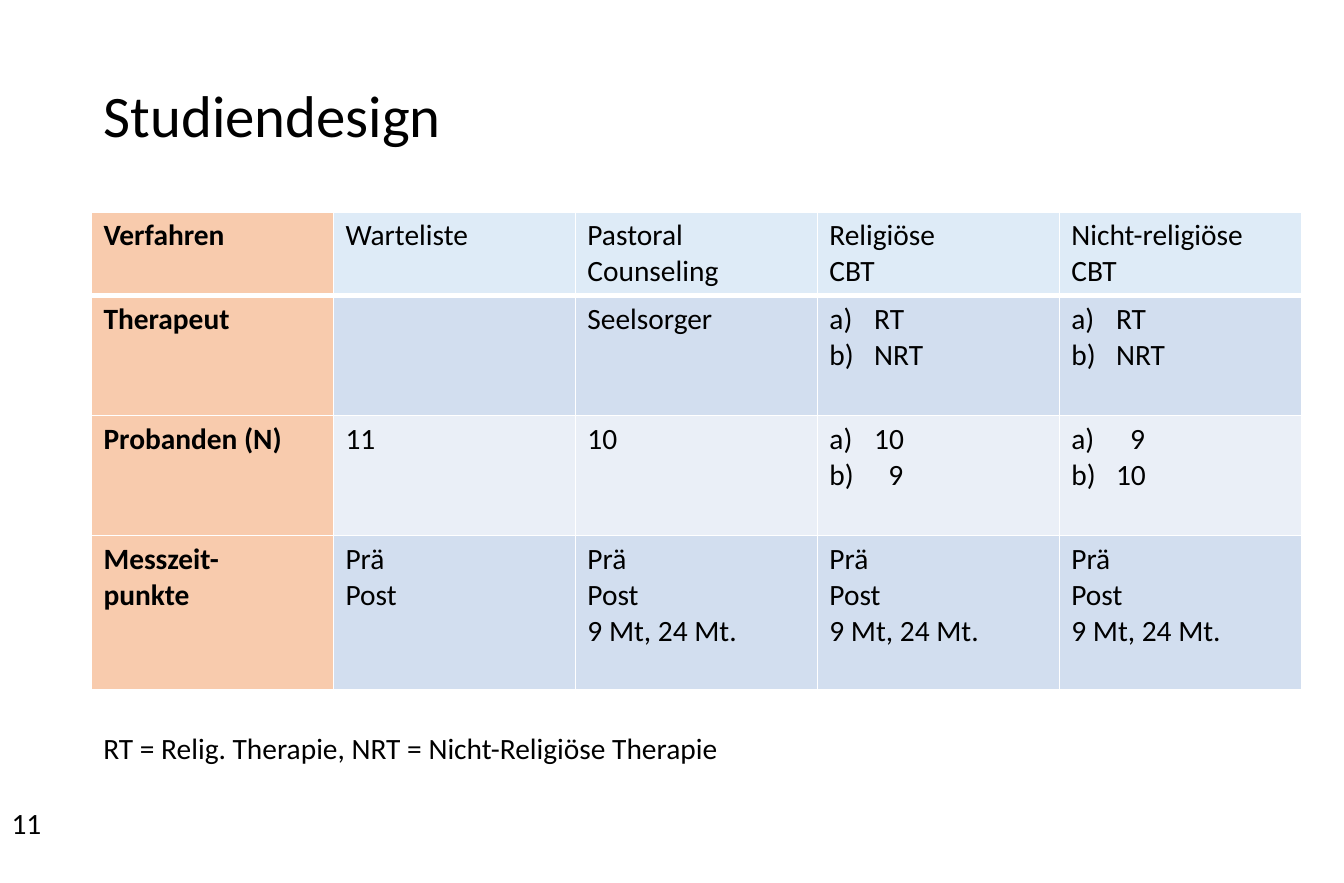
import pptx
import pptx.dml.color
import pptx.enum.text
import pptx.oxml
import pptx.oxml.ns
import pptx.util

EMU_PER_PX = 9144
FONT = "Calibri"
COLORS = {
    "text": "000000",
    "border": "FFFFFF",
    "label": "F8CBAD",
    "header": "DEEBF7",
    "band_dark": "D2DEEF",
    "band_light": "EAEFF7",
}
ROW_HEIGHTS = [70, 102, 102, 131]
ROW_FILLS = ["header", "band_dark", "band_light", "band_dark"]
LIST_INDENT = 38
DIGIT_INDENT = 12
FOLLOW_UP = "Prä\nPost\n9 Mt, 24 Mt."
DESIGN = [
    ["Verfahren", "Warteliste", "Pastoral Counseling", "Religiöse\nCBT", "Nicht-religiöse\vCBT"],
    ["Therapeut", "", "Seelsorger", ["RT", "NRT"], ["RT", "NRT"]],
    ["Probanden (N)", "11", "10", ["10", "9"], ["9", "10"]],
    ["Messzeit-\vpunkte", "Prä\nPost", FOLLOW_UP, FOLLOW_UP, FOLLOW_UP],
]


def px(length):
    """Turn a length in px into EMU."""
    return pptx.util.Emu(length * EMU_PER_PX)


def color(name):
    """Return the named colour."""
    return pptx.dml.color.RGBColor.from_string(COLORS[name])


def format_text(text_frame, size=18, bold=False):
    """Set the font of every run in a text frame."""
    for paragraph in text_frame.paragraphs:
        for run in paragraph.runs:
            run.font.name = FONT
            run.font.size = pptx.util.Pt(size)
            run.font.bold = bold
            run.font.color.rgb = color("text")


def add_title(slide, left, top, width, height):
    """Place the slide title in its placeholder."""
    title = slide.shapes.title
    title.left, title.top, title.width, title.height = map(px, (left, top, width, height))
    text_frame = title.text_frame
    text_frame.text = "Studiendesign"
    text_frame.auto_size = pptx.enum.text.MSO_AUTO_SIZE.NONE
    text_frame.vertical_anchor = pptx.enum.text.MSO_ANCHOR.TOP
    text_frame.paragraphs[0].alignment = pptx.enum.text.PP_ALIGN.LEFT
    text_frame.paragraphs[0].line_spacing = 0.9
    format_text(text_frame, 36)


def add_text(slide, text, left, top, width, height):
    """Place a wrapped text box."""
    box = slide.shapes.add_textbox(*map(px, (left, top, width, height)))
    box.text_frame.word_wrap = True
    box.text_frame.text = text
    format_text(box.text_frame)


def number_paragraph(paragraph, indent):
    """Give a paragraph a lettered bullet with a hanging indent."""
    properties = paragraph._p.get_or_add_pPr()
    properties.set("marL", str(px(indent)))
    properties.set("indent", str(-px(indent)))
    properties.append(pptx.oxml.parse_xml(
        f'<a:buAutoNum {pptx.oxml.ns.nsdecls("a")} type="alphaLcParenR"/>'))


def set_borders(cell, top, bottom):
    """Draw the four cell borders, with top and bottom widths in points."""
    properties = cell._tc.get_or_add_tcPr()
    for index, (side, width) in enumerate([("L", 1), ("R", 1), ("T", top), ("B", bottom)]):
        properties.insert(index, pptx.oxml.parse_xml(
            f'<a:ln{side} {pptx.oxml.ns.nsdecls("a")} w="{pptx.util.Pt(width)}"><a:solidFill>'
            f'<a:srgbClr val="{COLORS["border"]}"/></a:solidFill></a:ln{side}>'))


def fill_cell(cell, content, fill, bold):
    """Write a cell; a list becomes lettered items with aligned digits."""
    lettered = isinstance(content, list)
    cell.text = "\n".join(content) if lettered else content
    if lettered:
        for item, paragraph in zip(content, cell.text_frame.paragraphs):
            extra = DIGIT_INDENT if len(item) == 1 else 0
            number_paragraph(paragraph, LIST_INDENT + extra)
    format_text(cell.text_frame, bold=bold)
    cell.fill.solid()
    cell.fill.fore_color.rgb = color(fill)


def add_design_table(slide, left, top, width):
    """Place the study design table."""
    frame = slide.shapes.add_table(
        len(DESIGN), len(DESIGN[0]), *map(px, (left, top, width, sum(ROW_HEIGHTS))))
    table = frame.table
    table.horz_banding = False
    for column in table.columns:
        column.width = px(width) // len(DESIGN[0])
    for row_index, contents in enumerate(DESIGN):
        table.rows[row_index].height = px(ROW_HEIGHTS[row_index])
        for column_index, content in enumerate(contents):
            cell = table.cell(row_index, column_index)
            is_label = column_index == 0
            fill = "label" if is_label else ROW_FILLS[row_index]
            fill_cell(cell, content, fill, is_label)
            set_borders(cell, 3 if row_index == 1 else 1, 3 if row_index == 0 else 1)


def main():
    """Build and save the slide."""
    presentation = pptx.Presentation()
    presentation.slide_width, presentation.slide_height = px(1142), px(750)
    slide = presentation.slides.add_slide(presentation.slide_layouts[5])
    add_title(slide, 78, 69, 1028, 82)
    add_design_table(slide, 78, 180, 1028)
    add_text(slide, "RT = Relig. Therapie, NRT = Nicht-Religiöse Therapie", 78, 615, 854, 40)
    add_text(slide, "11", 0, 679, 112, 55)
    presentation.save("out.pptx")


if __name__ == "__main__":
    main()
